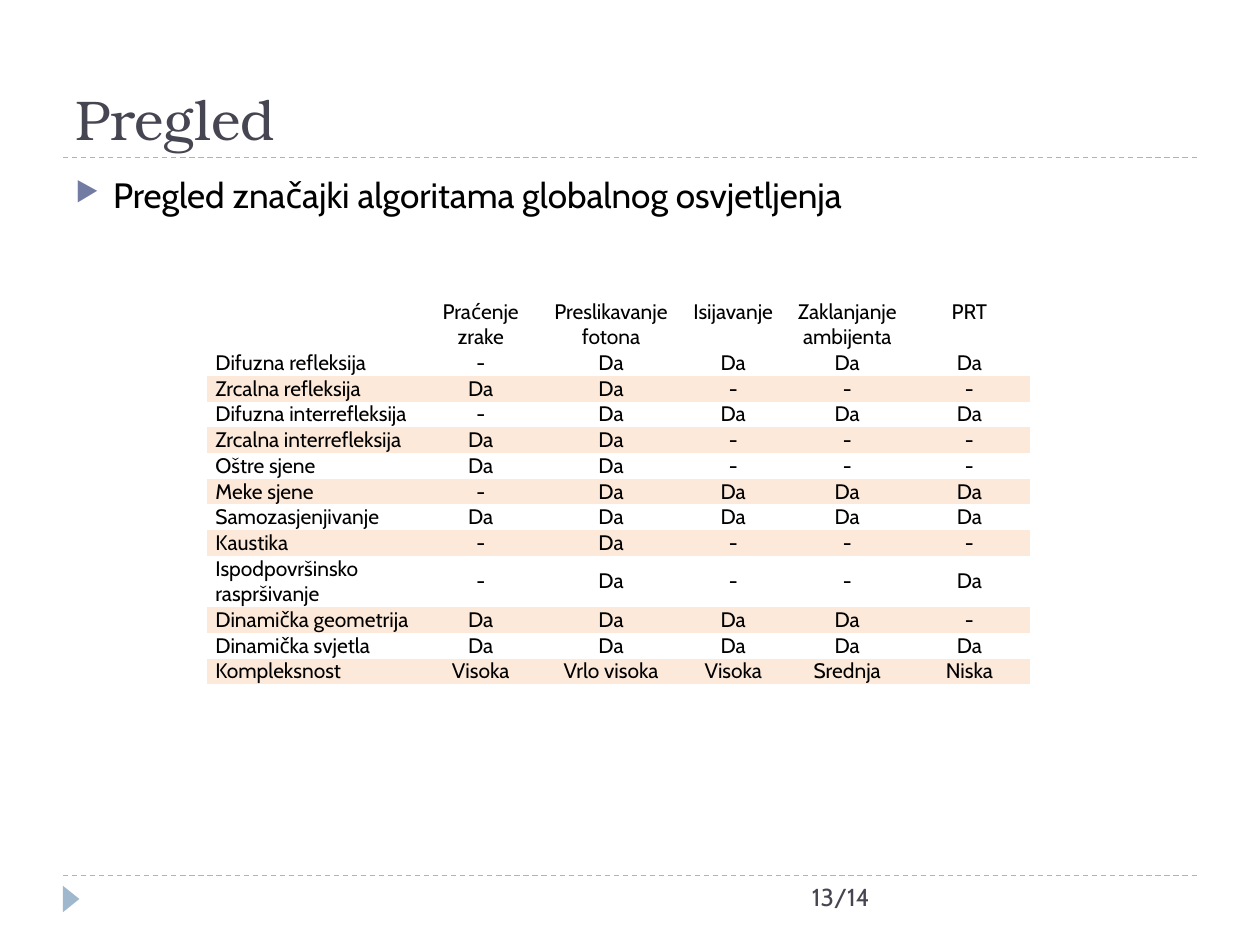
import lxml.etree
import pptx
import pptx.dml.color
import pptx.enum.dml
import pptx.enum.shapes
import pptx.enum.text
import pptx.oxml.ns
import pptx.util

Pt = pptx.util.Pt
qn = pptx.oxml.ns.qn
ALIGN = pptx.enum.text.PP_ALIGN
ANCHOR = pptx.enum.text.MSO_ANCHOR

TITLE = "Pregled"
BULLET = "Pregled značajki algoritama globalnog osvjetljenja"
PAGE = "13/14"
METHODS = ["", "Praćenje zrake", "Preslikavanje fotona", "Isijavanje",
           "Zaklanjanje ambijenta", "PRT"]
FEATURES = [
    ["Difuzna refleksija", "-", "Da", "Da", "Da", "Da"],
    ["Zrcalna refleksija", "Da", "Da", "-", "-", "-"],
    ["Difuzna interrefleksija", "-", "Da", "Da", "Da", "Da"],
    ["Zrcalna interrefleksija", "Da", "Da", "-", "-", "-"],
    ["Oštre sjene", "Da", "Da", "-", "-", "-"],
    ["Meke sjene", "-", "Da", "Da", "Da", "Da"],
    ["Samozasjenjivanje", "Da", "Da", "Da", "Da", "Da"],
    ["Kaustika", "-", "Da", "-", "-", "-"],
    ["Ispodpovršinsko raspršivanje", "-", "Da", "-", "-", "Da"],
    ["Dinamička geometrija", "Da", "Da", "Da", "Da", "-"],
    ["Dinamička svjetla", "Da", "Da", "Da", "Da", "Da"],
    ["Kompleksnost", "Visoka", "Vrlo visoka", "Visoka", "Srednja", "Niska"],
]
THEME = {
    "heading_font": "TeX Gyre Bonum", "body_font": "Cabin",
    "title_size": 32, "body_size": 20.1, "page_size": 14,
    "table_size": 12, "spacer_size": 10,
    "heading": "464653", "text": "000000", "accent": "9FB8CD",
    "bullet": "727CA3", "bands": ["FFFFFF", "FDE9D9"],
}
MARGIN, CONTENT_WIDTH = 36, 648
RULE_TOPS = [500.4, 90]
TABLE_LEFT, TABLE_TOP = 118.1, 157.7
COLUMN_WIDTHS = [121.7, 69.8, 79.2, 60.5, 69.8, 69.8]
SPACER_HEIGHT, LINE_HEIGHT = 13, 14.7
TWO_LINE_ROWS = {1, 10}
NO_STYLE = "{2D5ABB26-0587-4C30-8999-92F81FD0307C}"


def rgb(value):
    return pptx.dml.color.RGBColor.from_string(value)


def add_text(paragraph, text, size, color, font=THEME["body_font"]):
    run = paragraph.add_run()
    run.text = text
    run.font.size = Pt(size)
    run.font.name = font
    run.font.color.rgb = rgb(color)


def add_box(slide, left, top, width, height, anchor=ANCHOR.TOP):
    """Add a wrapping text box and return its first paragraph."""
    frame = slide.shapes.add_textbox(Pt(left), Pt(top), Pt(width), Pt(height)).text_frame
    frame.word_wrap = True
    frame.vertical_anchor = anchor
    return frame.paragraphs[0]


def add_rule(slide, top):
    line = slide.shapes.add_connector(
        pptx.enum.shapes.MSO_CONNECTOR.STRAIGHT,
        Pt(MARGIN), Pt(top), Pt(MARGIN + CONTENT_WIDTH), Pt(top))
    line.line.color.rgb = rgb(THEME["accent"])
    line.line.width = Pt(0.75)
    line.line.dash_style = pptx.enum.dml.MSO_LINE.DASH
    lxml.etree.SubElement(line._element.spPr, qn("a:effectLst"))


def add_page_marker(slide):
    marker = slide.shapes.add_shape(
        pptx.enum.shapes.MSO_SHAPE.ISOSCELES_TRIANGLE,
        Pt(33.1), Pt(509), Pt(15.1), Pt(9.4))
    marker.rotation = 90
    marker.shadow.inherit = False
    marker.fill.solid()
    marker.fill.fore_color.rgb = rgb(THEME["accent"])
    marker.line.fill.background()


def set_bullet(paragraph):
    properties = paragraph._p.get_or_add_pPr()
    properties.set("marL", str(Pt(21.6)))
    properties.set("indent", str(-Pt(21.6)))
    color = lxml.etree.SubElement(properties, qn("a:buClr"))
    lxml.etree.SubElement(color, qn("a:srgbClr"), val=THEME["bullet"])
    lxml.etree.SubElement(properties, qn("a:buSzPct"), val="76000")
    lxml.etree.SubElement(properties, qn("a:buChar"), char="▶")


def fill_cell(cell, text, column, band):
    """Write one cell; band is its fill colour, or None for no fill."""
    cell.margin_left = cell.margin_right = Pt(5.04)
    cell.margin_top = cell.margin_bottom = 0
    if band:
        cell.fill.solid()
        cell.fill.fore_color.rgb = rgb(band)
        cell.vertical_anchor = ANCHOR.MIDDLE
    else:
        cell.fill.background()
    paragraph = cell.text_frame.paragraphs[0]
    if column:
        paragraph.alignment = ALIGN.CENTER
    if text:
        add_text(paragraph, text, THEME["table_size"], THEME["text"])
    else:
        lxml.etree.SubElement(paragraph._p, qn("a:endParaRPr"),
                              sz=str(THEME["spacer_size"] * 100))


def add_feature_table(slide):
    rows = [[""] * len(METHODS), METHODS] + FEATURES
    heights = [SPACER_HEIGHT] + [
        LINE_HEIGHT * (2 if index in TWO_LINE_ROWS else 1)
        for index in range(1, len(rows))]
    table = slide.shapes.add_table(
        len(rows), len(METHODS), Pt(TABLE_LEFT), Pt(TABLE_TOP),
        Pt(sum(COLUMN_WIDTHS)), Pt(sum(heights))).table
    table.first_row = table.horz_banding = False
    table._tbl.tblPr.find(qn("a:tableStyleId")).text = NO_STYLE
    for column, width in zip(table.columns, COLUMN_WIDTHS):
        column.width = Pt(width)
    for row_index, (texts, height) in enumerate(zip(rows, heights)):
        table.rows[row_index].height = Pt(height)
        band = THEME["bands"][row_index % 2] if row_index > 1 else None
        for column_index, text in enumerate(texts):
            fill_cell(table.cell(row_index, column_index), text, column_index, band)
    table.cell(0, 0).merge(table.cell(0, len(METHODS) - 1))


def main():
    presentation = pptx.Presentation()
    presentation.slide_width, presentation.slide_height = Pt(720), Pt(540)
    slide = presentation.slides.add_slide(presentation.slide_layouts[6])

    for top in RULE_TOPS:
        add_rule(slide, top)
    add_page_marker(slide)

    title = add_box(slide, MARGIN, 12.2, CONTENT_WIDTH, 77.8, ANCHOR.BOTTOM)
    add_text(title, TITLE, THEME["title_size"], THEME["heading"], THEME["heading_font"])

    page = add_box(slide, 228.2, 500.4, 275.8, 28.8)
    page.alignment = ALIGN.RIGHT
    add_text(page, PAGE, THEME["page_size"], THEME["heading"])

    body = add_box(slide, MARGIN, 95.8, CONTENT_WIDTH, 67)
    body.space_before = Pt(6)
    set_bullet(body)
    add_text(body, BULLET, THEME["body_size"], THEME["text"])

    add_feature_table(slide)
    presentation.save("out.pptx")


if __name__ == "__main__":
    main()
